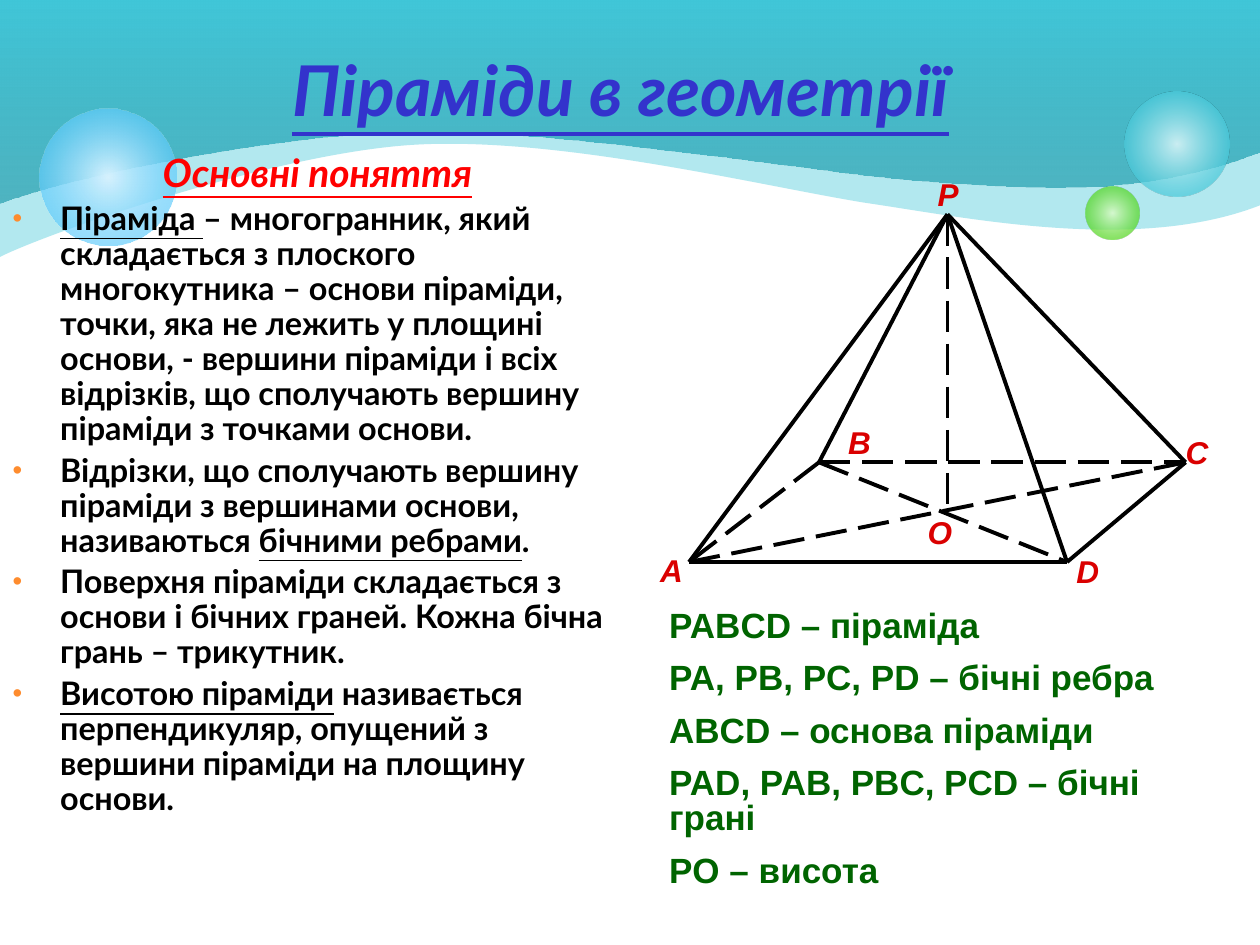
"""Build a slide on pyramids in geometry."""
from typing import NamedTuple

from lxml import etree
from pptx import Presentation
from pptx.dml.color import RGBColor
from pptx.enum.dml import MSO_LINE
from pptx.enum.shapes import MSO_CONNECTOR, MSO_SHAPE
from pptx.enum.text import MSO_ANCHOR, MSO_AUTO_SIZE, PP_ALIGN
from pptx.oxml import parse_xml
from pptx.oxml.ns import nsdecls, qn
from pptx.util import Cm, Pt

DASH, SOLID = MSO_LINE.LONG_DASH, MSO_LINE.SOLID
STRAIGHT, OVAL = MSO_CONNECTOR.STRAIGHT, MSO_SHAPE.OVAL
MIDDLE, TOP = MSO_ANCHOR.MIDDLE, MSO_ANCHOR.TOP
CENTER, LEFT = PP_ALIGN.CENTER, PP_ALIGN.LEFT
FIXED = MSO_AUTO_SIZE.NONE
WIDTH, HEIGHT = 25.4, 19.05
ROUND = '<a:path path="circle"><a:fillToRect l="50000" t="50000" r="50000" b="50000"/></a:path>'
RISE = '<a:lin ang="16200000" scaled="0"/>'
DOT = ('<a:buClr {0}><a:srgbClr val="FE8C2E"/></a:buClr>', '<a:buSzPct {0} val="85000"/>',
       '<a:buFont {0} typeface="Arial"/>', '<a:buChar {0} char="•"/>')
PLAIN = ('<a:buNone {0}/>',)


class Stop(NamedTuple):
    """One colour of a fill: place and opacity in percent."""
    place: int
    color: str
    alpha: int = 100


class Wave(NamedTuple):
    """A band from the slide's top to a curved lower edge, in hundredths of a cm."""
    start: tuple
    curve: list
    stops: list


class Ball(NamedTuple):
    """A glowing disc."""
    left: float
    top: float
    size: float
    stops: list


class Node(NamedTuple):
    """A point of the pyramid and the corner of its label."""
    text: str
    x: float
    y: float
    left: float
    top: float


WAVES = [
    Wave((0, 518), [(84, 475), (544, 310), (833, 292),
                    (1125, 274), (1539, 376), (1745, 409),
                    (1951, 439), (2291, 511), (2540, 414)],
         [Stop(0, "40C6D8", 40)]),
    Wave((0, 411), [(114, 366), (516, 274), (828, 267),
                    (1140, 259), (1671, 353), (1872, 366),
                    (2073, 378), (2291, 404), (2540, 307)],
         [Stop(0, "249EAE", 69), Stop(100, "40C6D8")]),
]
BALLS = [
    Ball(22.68, 1.85, 2.11, [Stop(0, "D9F4F7", 90), Stop(76, "40C6D8", 70)]),
    Ball(21.89, 3.76, 1.07, [Stop(0, "DAFACD", 90), Stop(76, "4CD416", 70)]),
    Ball(0.79, 2.18, 2.77, [Stop(0, "D6F2FE"), Stop(100, "33BDFB", 54)]),
]
NODES = {
    "A": Node("А", 13.89, 11.33, 13.31, 11.1),
    "B": Node("В", 16.51, 9.32, 17.1, 8.53),
    "C": Node("С", 23.9, 9.32, 23.9, 8.73),
    "D": Node("D", 21.51, 11.33, 21.7, 11.13),
    "O": Node("O", 19.1, 10.34, 18.7, 10.34),
    "P": Node("P", 19.1, 4.32, 18.9, 3.53),
}
EDGES = {DASH: ["AC", "BD", "PO", "BA", "BC"],
         SOLID: ["PA", "PB", "PD", "PC", "AD", "CD"]}
TERMS = [
    "_Піраміда _– многогранник, який складається з плоского многокутника – основи піраміди, "
    "точки, яка не лежить у площині основи, - вершини піраміди і всіх відрізків, "
    "що сполучають вершину піраміди з точками основи.",
    "Відрізки, що сполучають вершину піраміди з вершинами основи, "
    "називаються _бічними ребрами_.",
    "Поверхня піраміди складається з основи і бічних граней. Кожна бічна грань – трикутник.",
    "_Висотою піраміди_ називається перпендикуляр, опущений з вершини піраміди на площину основи.",
]
FACTS = ["PABCD – піраміда", "PA, PB, PC, PD – бічні ребра", "ABCD – основа піраміди",
         "PAD, PAB, PBC, PCD – бічні грані", "PO – висота"]
HEAD = {"name": "Lato", "size": Pt(40), "bold": True, "italic": True}
LEAD = HEAD | {"size": Pt(22.2)}
TERM = {"name": "Lato", "size": Pt(18.5), "bold": True, "italic": False}
MARK = {"name": "Arial", "size": Pt(18), "bold": True, "italic": True}
FACT = {"name": "Arial", "size": Pt(20), "bold": True, "italic": False}
FLOW = {"alignment": LEFT, "line_spacing": 0.9, "space_before": Pt(3.8)}
LIST = {"alignment": LEFT, "line_spacing": Pt(20), "space_before": Pt(10)}


def hue(color, code: str) -> None:
    """Set a colour from a hex string."""
    color.rgb = RGBColor.from_string(code)


def paint(shape, stops: list, way: str) -> None:
    """Fill a shape with see-through colours and no outline."""
    tints = [f'<a:srgbClr val="{s.color}"><a:alpha val="{s.alpha * 1000}"/></a:srgbClr>'
             for s in stops]
    if len(stops) == 1:
        xml = f'<a:solidFill {nsdecls("a")}>{tints[0]}</a:solidFill>'
    else:
        parts = "".join(f'<a:gs pos="{s.place * 1000}">{t}</a:gs>' for s, t in zip(stops, tints))
        xml = f'<a:gradFill {nsdecls("a")}><a:gsLst>{parts}</a:gsLst>{way}</a:gradFill>'
    shape.shadow.inherit = False
    shape.line.fill.background()
    shape._element.spPr.insert(2, parse_xml(xml))


def draw_wave(shapes, wave: Wave) -> None:
    """Draw one wave band, turning each three lower segments into a curve."""
    pen = shapes.build_freeform(0, 0, scale=Cm(0.01))
    pen.add_line_segments([wave.start, *wave.curve, (2540, 0)])
    shape = pen.convert_to_shape()
    lines = list(shape._element.iter(qn("a:lnTo")))[1:len(wave.curve) + 1]
    for spot in range(0, len(lines), 3):
        bend = etree.Element(qn("a:cubicBezTo"))
        lines[spot].addprevious(bend)
        for line in lines[spot:spot + 3]:
            bend.append(line[0])
            line.getparent().remove(line)
    paint(shape, wave.stops, RISE)


def draw_ball(shapes, ball: Ball) -> None:
    """Draw one disc."""
    shape = shapes.add_shape(OVAL, *map(Cm, (ball.left, ball.top, ball.size, ball.size)))
    paint(shape, ball.stops, ROUND)


def draw_edge(shapes, start: Node, end: Node, dash) -> None:
    """Draw one line between two points."""
    edge = shapes.add_connector(STRAIGHT, *map(Cm, (start.x, start.y, end.x, end.y)))
    edge.line.width = Pt(2.25)
    edge.line.dash_style = dash
    hue(edge.line.color, "000000")
    etree.SubElement(edge._element.spPr, qn("a:effectLst"))


def write(para, text: str, style: dict, code: str, form: dict) -> None:
    """Write a paragraph, underlining the parts between underscores."""
    for key, value in form.items():
        setattr(para, key, value)
    for spot, part in enumerate(text.split("_")):
        if part:
            run = para.add_run()
            run.text = part
            for key, value in (style | {"underline": spot % 2 == 1}).items():
                setattr(run.font, key, value)
            hue(run.font.color, code)


def hang(para, marks: tuple) -> None:
    """Give a paragraph its hanging indent and bullet."""
    props = para._p.get_or_add_pPr()
    props.set("marL", str(Cm(0.96)))
    props.set("indent", str(Cm(-0.96)))
    for mark in marks:
        props.append(parse_xml(mark.format(nsdecls("a"))))


def setup(shape, box: tuple, anchor) -> None:
    """Place a text shape."""
    for key, value in zip(("left", "top", "width", "height"), box):
        setattr(shape, key, Cm(value))
    frame = shape.text_frame
    frame.word_wrap, frame.auto_size, frame.vertical_anchor = True, FIXED, anchor


def add_text(shapes, box: tuple, lines: list, style: dict, code: str, form: dict) -> None:
    """Add a text box without margins."""
    shape = shapes.add_textbox(0, 0, 0, 0)
    setup(shape, box, TOP)
    frame = shape.text_frame
    for side in ("left", "top", "right", "bottom"):
        setattr(frame, f"margin_{side}", 0)
    for spot, line in enumerate(lines):
        write(frame.add_paragraph() if spot else frame.paragraphs[0], line, style, code, form)


def main() -> None:
    """Build and save the slide."""
    deck = Presentation()
    deck.slide_width, deck.slide_height = Cm(WIDTH), Cm(HEIGHT)
    slide = deck.slides.add_slide(deck.slide_layouts[1])
    shapes = slide.shapes
    title, body = slide.placeholders
    for wave in WAVES:
        draw_wave(shapes, wave)
    for ball in BALLS:
        draw_ball(shapes, ball)
    for shape in (body, title):
        shapes._spTree.append(shape._element)
    setup(body, (0, 2.97, 12.8, 16.08), TOP)
    setup(title, (0.69, 0.53, 23.65, 2.49), MIDDLE)
    write(title.text_frame.paragraphs[0], "_Піраміди в геометрії_", HEAD, "3333CC",
          {"alignment": CENTER})
    lead = body.text_frame.paragraphs[0]
    write(lead, "_Основні поняття_", LEAD, "FF0000", FLOW | {"alignment": CENTER})
    hang(lead, PLAIN)
    for term in TERMS:
        para = body.text_frame.add_paragraph()
        write(para, term, TERM, "000000", FLOW)
        hang(para, DOT)
    for dash, pairs in EDGES.items():
        for start, end in pairs:
            draw_edge(shapes, NODES[start], NODES[end], dash)
    for node in NODES.values():
        add_text(shapes, (node.left, node.top, 0.61, 0.76), [node.text], MARK, "DA0000", {})
    add_text(shapes, (13.49, 12.3, 11.4, 5.99), FACTS, FACT, "006400", LIST)
    deck.save("out.pptx")


if __name__ == "__main__":
    main()
